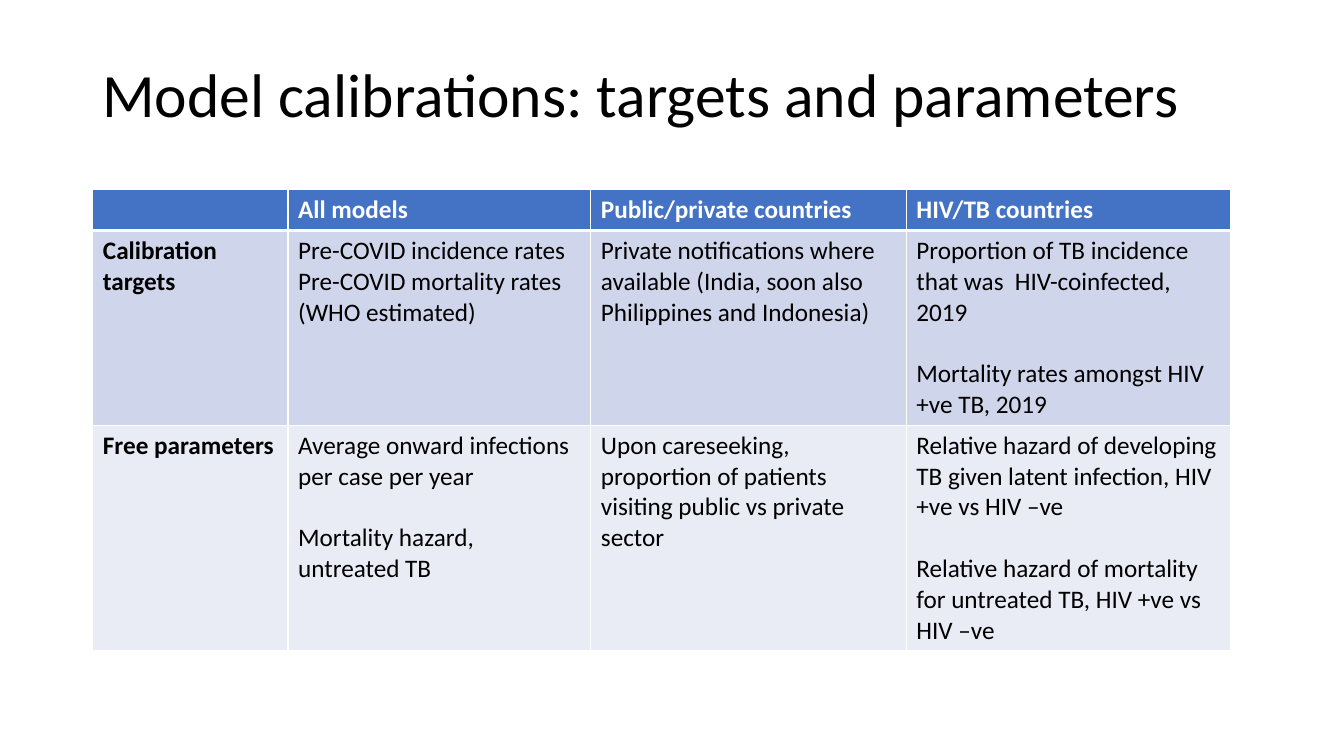
import pptx
import pptx.dml.color
import pptx.enum.text
import pptx.oxml
import pptx.oxml.ns
import pptx.util
from pptx.util import Cm

FONT = "Calibri"
BLACK = "000000"
WHITE = "FFFFFF"
ROW_FILLS = ["4472C4", "CFD5EA", "E9EBF5"]
COLUMN_WIDTHS = [4.92, 7.63, 7.95, 8.18]
ROW_HEIGHTS = [1.03, 4.91, 5.67]
LINE_GAP = 22

CALIBRATIONS = [
    [[""], ["All models"], ["Public/private countries"], ["HIV/TB countries"]],
    [
        ["Calibration targets"],
        ["Pre-COVID incidence rates", "Pre-COVID mortality rates (WHO estimated)"],
        ["Private notifications where available (India, soon also Philippines and Indonesia)"],
        ["Proportion of TB incidence that was  HIV-coinfected, 2019",
         "Mortality rates amongst HIV +ve TB, 2019"],
    ],
    [
        ["Free parameters"],
        ["Average onward infections per case per year", "Mortality hazard, untreated TB"],
        ["Upon careseeking, proportion of patients visiting public vs private sector"],
        ["Relative hazard of developing TB given latent infection, HIV +ve vs HIV –ve",
         "Relative hazard of mortality for untreated TB, HIV +ve vs HIV –ve"],
    ],
]
UNSPACED_CELLS = {(1, 1)}


def rgb(value):
    return pptx.dml.color.RGBColor.from_string(value)


def format_runs(paragraph, size, color, bold=False):
    for run in paragraph.runs:
        run.font.name = FONT
        run.font.size = pptx.util.Pt(size)
        run.font.bold = bold
        run.font.color.rgb = rgb(color)


def add_title(slide, wording):
    title = slide.shapes.add_textbox(Cm(2.33), Cm(1.01), Cm(29.21), Cm(2.9))
    frame = title.text_frame
    frame.word_wrap = True
    frame.vertical_anchor = pptx.enum.text.MSO_ANCHOR.MIDDLE
    frame.text = wording
    heading = frame.paragraphs[0]
    heading.line_spacing = 0.9
    format_runs(heading, 44, BLACK)


def add_border(cell, side, points):
    border = pptx.oxml.parse_xml(
        f'<a:ln{side} {pptx.oxml.ns.nsdecls("a")} w="{pptx.util.Pt(points)}">'
        f'<a:solidFill><a:srgbClr val="{WHITE}"/></a:solidFill></a:ln{side}>'
    )
    cell._tc.get_or_add_tcPr().append(border)


def fill_cell(cell, row, column, statements):
    for side in "LRTB":
        under_header = (row, side) in {(0, "B"), (1, "T")}
        add_border(cell, side, 3 if under_header else 1)
    cell.fill.solid()
    cell.fill.fore_color.rgb = rgb(ROW_FILLS[row])
    cell.text_frame.text = "\n".join(statements)
    for index, paragraph in enumerate(cell.text_frame.paragraphs):
        format_runs(paragraph, 18, BLACK if row else WHITE, row == 0 or column == 0)
        if index and (row, column) not in UNSPACED_CELLS:
            paragraph.space_before = pptx.util.Pt(LINE_GAP)


def add_calibration_table(slide):
    table = slide.shapes.add_table(
        len(ROW_HEIGHTS), len(COLUMN_WIDTHS), Cm(2.34), Cm(4.78),
        Cm(sum(COLUMN_WIDTHS)), Cm(sum(ROW_HEIGHTS)),
    ).table
    for column, width in zip(table.columns, COLUMN_WIDTHS):
        column.width = Cm(width)
    for row, height in zip(table.rows, ROW_HEIGHTS):
        row.height = Cm(height)
    for row, entries in enumerate(CALIBRATIONS):
        for column, statements in enumerate(entries):
            fill_cell(table.cell(row, column), row, column, statements)


def main():
    deck = pptx.Presentation()
    deck.slide_width = Cm(33.87)
    deck.slide_height = Cm(19.05)
    slide = deck.slides.add_slide(deck.slide_layouts[6])
    add_title(slide, "Model calibrations: targets and parameters")
    add_calibration_table(slide)
    deck.save("out.pptx")


if __name__ == "__main__":
    main()
